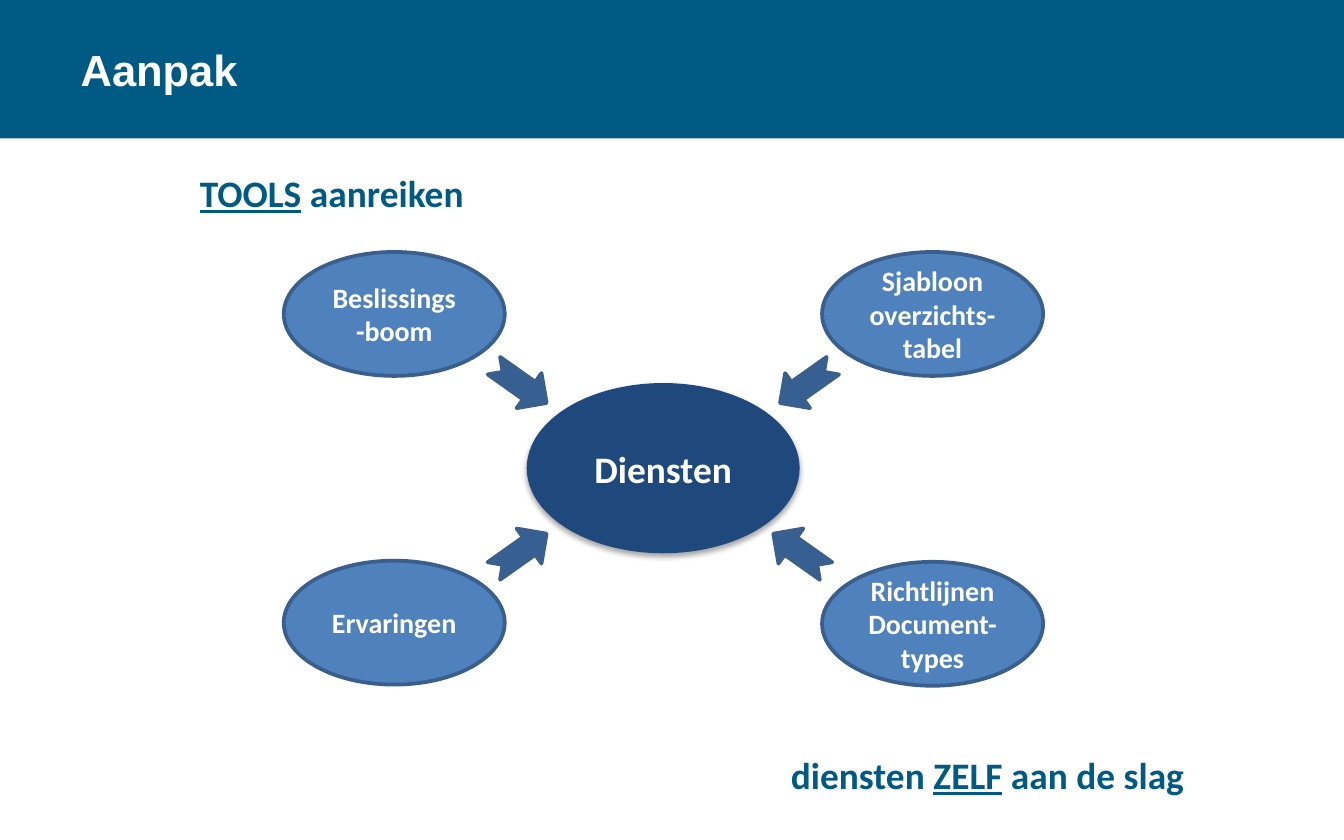
from pptx import Presentation
from pptx.dml.color import RGBColor
from pptx.enum.shapes import MSO_SHAPE as Kind
from pptx.enum.text import MSO_ANCHOR as Anchor, MSO_AUTO_SIZE as Fit, PP_ALIGN as Align
from pptx.oxml import parse_xml
from pptx.oxml.ns import nsdecls
from pptx.util import Pt


def tint(part, code):
    part.solid()
    part.fore_color.rgb = RGBColor.from_string(code)


def write(par, runs, size, code, face="Calibri"):
    for text, under in runs:
        run = par.add_run()
        run.text = text
        form = {"name": face, "size": Pt(size), "bold": True, "underline": under}
        for key, val in form.items():
            setattr(run.font, key, val)
        tint(run.font.fill, code)


prs = Presentation()
prs.slide_width, prs.slide_height = Pt(720), Pt(450)
slide = prs.slides.add_slide(prs.slide_layouts[5])
shapes = slide.shapes

title = shapes.title
place = {"left": Pt(36), "top": Pt(0), "width": Pt(648), "height": Pt(74.2)}
for key, val in place.items():
    setattr(title, key, val)
title.text_frame.vertical_anchor = Anchor.MIDDLE
head = title.text_frame.paragraphs[0]
head.alignment = Align.LEFT
write(head, [("Aanpak", False)], 23.3, "FFFFFF", "Arial")

band = shapes.add_shape(Kind.RECTANGLE, Pt(0), Pt(0), Pt(720), Pt(74.2))
band.shadow.inherit = False
tint(band.fill, "005A84")
band.line.fill.background()
title.element.addprevious(band.element)

ovals = [
    ("Beslissings-boom", 152, 135, 118.4, 66.4, 15, "4F81BD", 7.2),
    ("Ervaringen", 152, 300.4, 118.4, 66.4, 15, "4F81BD", 6),
    ("Sjabloon overzichts-tabel", 440.4, 135, 118.4, 66.4, 15, "4F81BD", 6),
    ("Richtlijnen\vDocument-types", 440.4, 301, 118.4, 66.4, 15, "4F81BD", 6),
    ("Diensten", 282.2, 205.2, 146.2, 91.2, 20, "1F497D", 7.2),
]
for text, left, top, wide, high, size, code, pad in ovals:
    oval = shapes.add_shape(Kind.OVAL, Pt(left), Pt(top), Pt(wide), Pt(high))
    oval.shadow.inherit = False
    tint(oval.fill, code)
    frame = oval.text_frame
    form = {
        "word_wrap": True, "vertical_anchor": Anchor.MIDDLE,
        "margin_left": Pt(pad), "margin_right": Pt(pad),
        "margin_top": Pt(pad / 2), "margin_bottom": Pt(pad / 2),
    }
    for key, val in form.items():
        setattr(frame, key, val)
    par = frame.paragraphs[0]
    par.alignment = Align.CENTER
    first, *rest = text.split("\v")
    write(par, [(first, False)], size, "FFFFFF")
    for line in rest:
        par.add_line_break()
        write(par, [(line, False)], size, "FFFFFF")
    if text == "Diensten":
        oval.line.fill.background()
        list_ = oval.element.spPr.find("{*}effectLst")
        list_.append(parse_xml(
            f'<a:outerShdw {nsdecls("a")} blurRad="{Pt(3.1)}" dist="{Pt(1.8)}" '
            'dir="5400000" rotWithShape="0"><a:srgbClr val="000000">'
            '<a:alpha val="35000"/></a:srgbClr></a:outerShdw>'))
    else:
        tint(oval.line.fill, "3A5F8C")
        oval.line.width = Pt(2)

tilt = 35.3
arrows = [
    (261.4, 194.4, tilt),
    (414.7, 194.4, 180 - tilt),
    (261.4, 284.4, 360 - tilt),
    (411.1, 284.4, 180 + tilt),
]
for left, top, turn in arrows:
    arrow = shapes.add_shape(Kind.NOTCHED_RIGHT_ARROW, Pt(left), Pt(top), Pt(34.6), Pt(23))
    arrow.shadow.inherit = False
    arrow.rotation = turn
    tint(arrow.fill, "376092")
    tint(arrow.line.fill, "3A5F8C")
    arrow.line.width = Pt(2)

notes = [
    (100, 87.8, 157, [("TOOLS", True), (" aanreiken", False)]),
    (416.6, 399.6, 226.8, [("diensten ", False), ("ZELF", True), (" aan de slag", False)]),
]
for left, top, wide, runs in notes:
    box = shapes.add_textbox(Pt(left), Pt(top), Pt(wide), Pt(31.7))
    box.text_frame.word_wrap = False
    box.text_frame.auto_size = Fit.SHAPE_TO_FIT_TEXT
    write(box.text_frame.paragraphs[0], runs, 20, "005A84")

prs.save("out.pptx")
